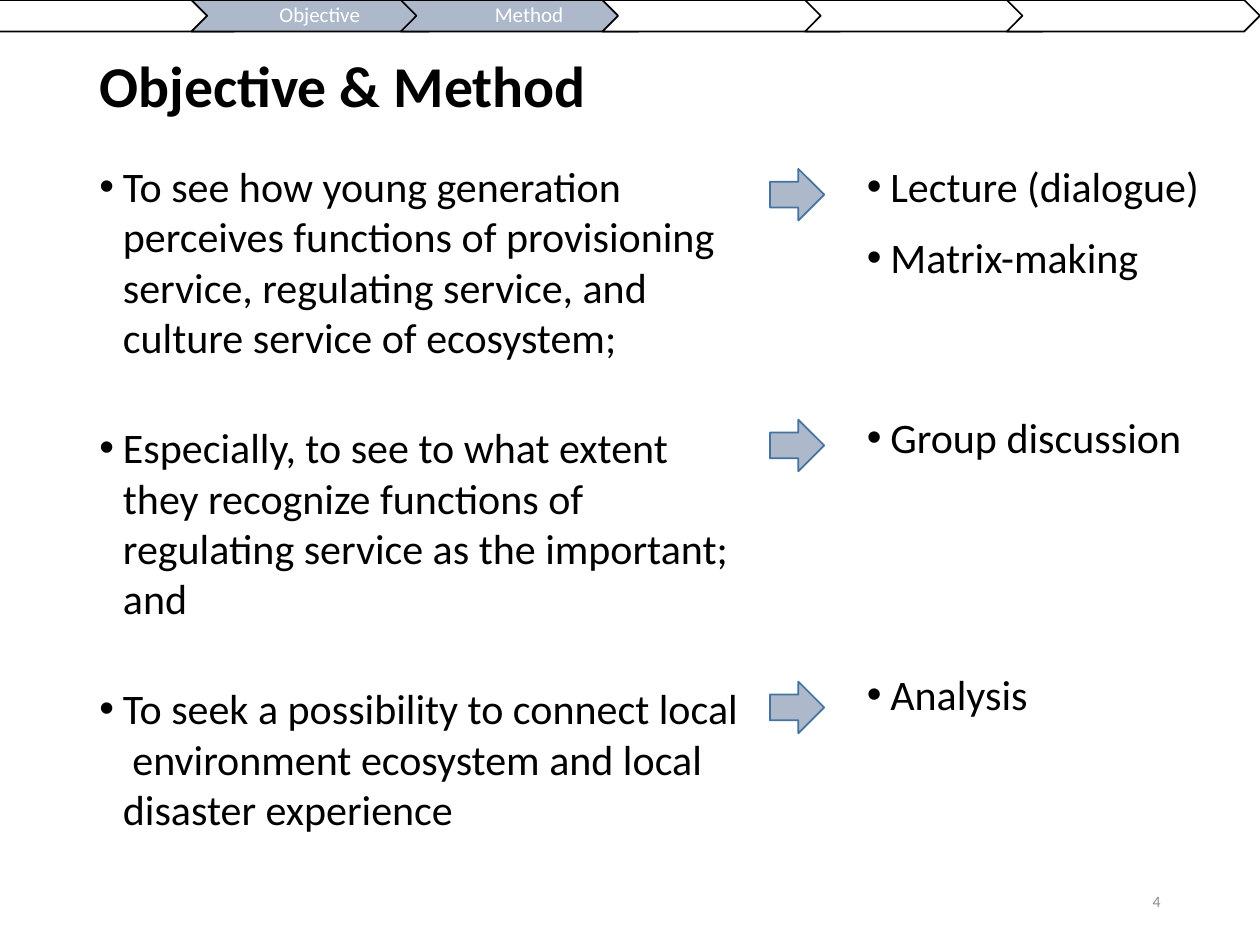
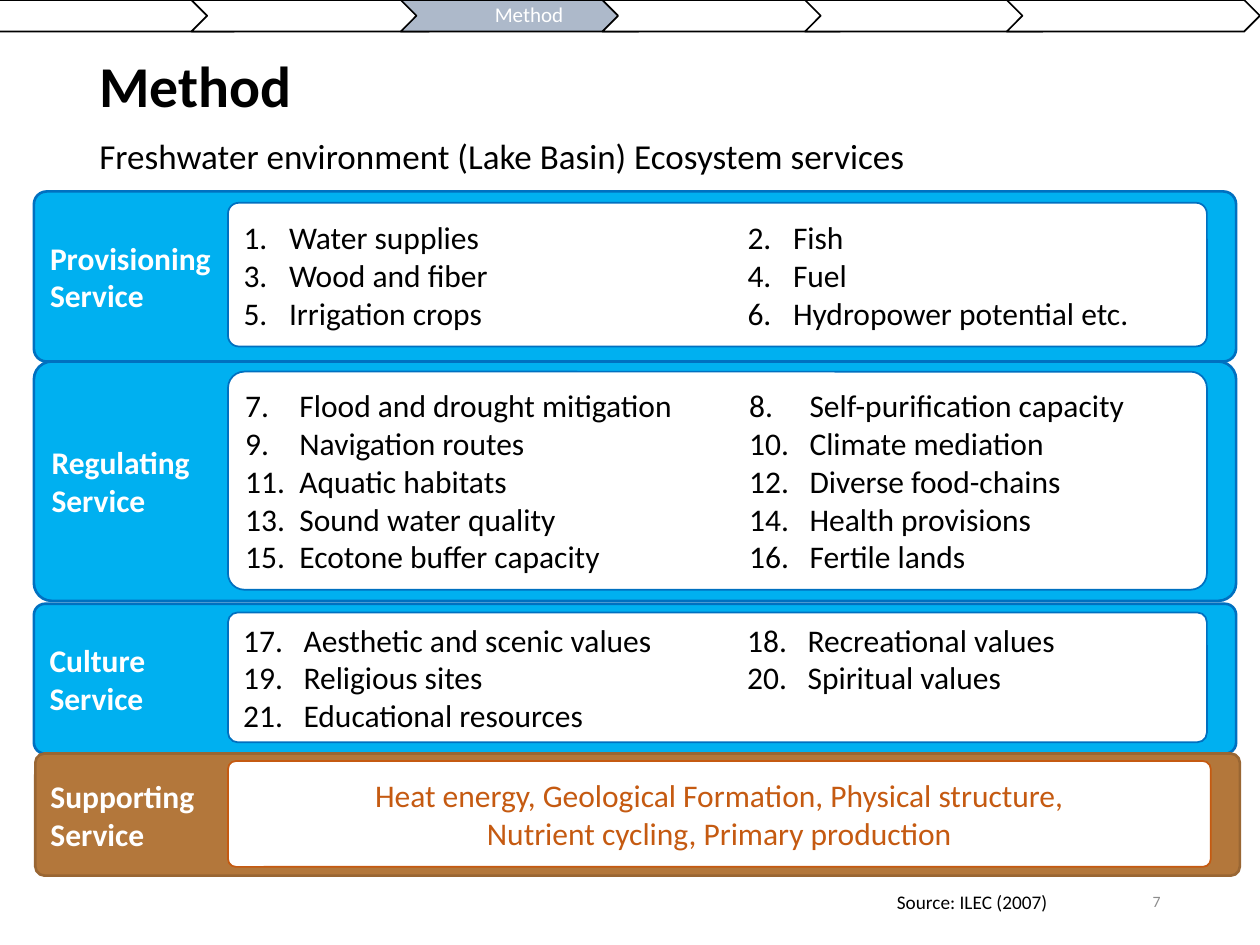
import pptx
import pptx.util
import pptx.dml.color
import pptx.enum.shapes
import pptx.enum.text
import pptx.oxml.ns
from lxml import etree

Pt = pptx.util.Pt
SHAPE = pptx.enum.shapes.MSO_SHAPE
ALIGN = pptx.enum.text.PP_ALIGN
ANCHOR = pptx.enum.text.MSO_ANCHOR

STEPS = [(-2, ""), (109.4, "Objective"), (229, "Method"), (344.2, ""), (460, ""), (575.3, "")]

OBJECTIVES = [
    (0, "To see how young generation perceives functions of provisioning service, "
        "regulating service, and culture service of ecosystem;"),
    (34, "Especially, to see to what extent they recognize functions of regulating "
         "service as the important; and"),
    (34, "To seek a possibility to connect local  environment ecosystem and local "
         "disaster experience"),
]
METHODS = [
    (0, "Lecture (dialogue)"),
    (12, "Matrix-making"),
    (74, "Group discussion"),
    (118, "Analysis"),
]
ARROW_TOPS = [96.5, 239.8, 389.5]

SERVICES = [
    dict(name="Culture", first=17, outer=(345, 85.7), inner=(350, 74.2), hang=(34.5, 34.5),
         items=["Aesthetic and scenic values", "Recreational values", "Religious sites",
                "Spiritual values", "Educational resources"]),
    dict(name="Regulating", first=7, outer=(206.6, 136.8), inner=(212.4, 124.6), hang=(31, 34.5),
         items=["Flood and drought mitigation", "Self-purification capacity",
                "Navigation routes", "Climate mediation", "Aquatic habitats",
                "Diverse food-chains", "Sound water quality", "Health provisions",
                "Ecotone buffer capacity", "Fertile lands"]),
    dict(name="Provisioning", first=1, outer=(109.4, 97.2), inner=(115.9, 82.1), hang=(26, 26),
         items=["Water supplies", "Fish", "Wood and fiber", "Fuel",
                "Irrigation crops", "Hydropower potential etc."]),
]
SUPPORTING = ["Heat energy, Geological Formation, Physical structure,",
              "Nutrient cycling, Primary production"]

THEME = dict(
    font="Calibri", black="000000", white="FFFFFF", grey="8C8C8C",
    step="ADB9CA", arrow_line="43739E", blue="00B0F0", blue_line="0070C0",
    brown="B3773B", brown_line="996633", rust="C55A11",
    title=33, body=24, subtitle=20, card=18, step_size=12, source=11, number=9,
)
COLUMN = 288
BULLET_INDENT = 13.5


def rgb(name):
    return pptx.dml.color.RGBColor.from_string(THEME[name])


def apply(obj, values):
    for key, value in values.items():
        setattr(obj, key, value)


def write(sp, lines, size, color="black", bold=False, anchor=ANCHOR.TOP, frame={}, para={}):
    tf = sp.text_frame
    apply(tf, dict(word_wrap=True, vertical_anchor=anchor, **frame))
    for i, line in enumerate(lines):
        p = tf.paragraphs[0] if i == 0 else tf.add_paragraph()
        apply(p, dict(dict(alignment=ALIGN.LEFT), **para))
        r = p.add_run()
        r.text = line
        apply(r.font, dict(name=THEME["font"], size=Pt(THEME[size]), bold=bold))
        r.font.color.rgb = rgb(color)
    return tf.paragraphs


def add_text(s, box, lines, size, **fmt):
    return write(s.shapes.add_textbox(*map(Pt, box)), lines, size, **fmt)


def add_shape(s, kind, box, fill, line, width=1):
    sp = s.shapes.add_shape(kind, *map(Pt, box))
    sp.shadow.inherit = False
    if fill:
        sp.fill.solid()
        sp.fill.fore_color.rgb = rgb(fill)
    else:
        sp.fill.background()
    sp.line.color.rgb = rgb(line)
    sp.line.width = Pt(width)
    return sp


def add_child(parent, tag, **attrs):
    child = etree.SubElement(parent, pptx.oxml.ns.qn(tag))
    for key, value in attrs.items():
        child.set(key, str(value))
    return child


def add_bullets(s, box, entries):
    paragraphs = add_text(s, box, [text for gap, text in entries], "body")
    for p, (gap, text) in zip(paragraphs, entries):
        p.space_before = Pt(gap)
        pPr = p._p.get_or_add_pPr()
        pPr.set("marL", str(Pt(BULLET_INDENT)))
        pPr.set("indent", str(-Pt(BULLET_INDENT)))
        add_child(pPr, "a:buFont", typeface="Arial")
        add_child(pPr, "a:buChar", char="•")


def add_steps(s, active):
    insets = dict(margin_left=Pt(3.6), margin_right=Pt(1.4),
                  margin_top=Pt(2.9), margin_bottom=Pt(2.9))
    for i, (left, label) in enumerate(STEPS):
        on = label in active
        kind = SHAPE.CHEVRON if i else SHAPE.PENTAGON
        fill = "step" if on else "white" if i else None
        add_shape(s, kind, (left, 0, 144.7, 18), fill, "black")
        if on:
            add_text(s, (left + 9.2, 0, 126, 18), [label], "step_size", color="white",
                     anchor=ANCHOR.MIDDLE, frame=insets,
                     para=dict(alignment=ALIGN.CENTER, line_spacing=0.9))


def add_slide(prs, title, number, active):
    s = prs.slides.add_slide(prs.slide_layouts[6])
    add_text(s, (49.7, 28.4, 620.6, 44.6), [title], "title", bold=True,
             anchor=ANCHOR.MIDDLE, para=dict(line_spacing=0.9))
    add_text(s, (508.3, 500.4, 162, 28.8), [number], "number", color="grey",
             anchor=ANCHOR.MIDDLE, para=dict(alignment=ALIGN.RIGHT))
    add_steps(s, active)
    return s


def add_card(s, box, colors, name):
    sp = add_shape(s, SHAPE.ROUNDED_RECTANGLE, box, *colors, 1.5)
    sp.adjustments[0] = 0.075
    write(sp, [name, "Service"], "card", color="white", bold=True, anchor=ANCHOR.MIDDLE)


def add_panel(s, box, line, lines, **fmt):
    sp = add_shape(s, SHAPE.ROUNDED_RECTANGLE, box, "white", line)
    sp.adjustments[0] = 0.075
    return write(sp, lines, "card", anchor=ANCHOR.MIDDLE, **fmt)


def add_service(s, name, first, outer, inner, hang, items):
    add_card(s, (19.4, outer[0], 687, outer[1]), ("blue", "blue_line"), name)
    numbered = [f"{n}.\t{item}" for n, item in enumerate(items, first)]
    rows = ["\t".join(numbered[i:i + 2]) for i in range(0, len(numbered), 2)]
    for p in add_panel(s, (130.3, inner[0], 559.4, inner[1]), "blue_line", rows):
        tabs = add_child(p._p.get_or_add_pPr(), "a:tabLst")
        for stop in (hang[0], COLUMN, COLUMN + hang[1]):
            add_child(tabs, "a:tab", pos=Pt(stop), algn="l")


def main():
    prs = pptx.Presentation()
    apply(prs, dict(slide_width=Pt(720), slide_height=Pt(540)))

    s = add_slide(prs, "Objective & Method", "4", ["Objective", "Method"])
    for top in ARROW_TOPS:
        add_shape(s, SHAPE.RIGHT_ARROW, (440, top, 31, 29.5), "step", "arrow_line")
    add_bullets(s, (49.7, 88.2, 384.5, 412.6), OBJECTIVES)
    add_bullets(s, (488.2, 88.2, 212.4, 404.6), METHODS)

    s = add_slide(prs, "Method", "7", ["Method"])
    add_text(s, (49.7, 73.4, 630.7, 36.7),
             ["Freshwater environment (Lake Basin) Ecosystem services"], "subtitle")
    for service in SERVICES:
        add_service(s, **service)
    add_card(s, (20.2, 430.6, 688.3, 69.8), ("brown", "brown_line"), "Supporting")
    add_panel(s, (130.3, 434.9, 561.6, 60.5), "rust", SUPPORTING, color="rust",
              para=dict(alignment=ALIGN.CENTER))
    add_text(s, (505.4, 505.4, 131.8, 20.9), ["Source: ILEC (2007)"], "source")

    prs.save("out.pptx")


if __name__ == "__main__":
    main()
